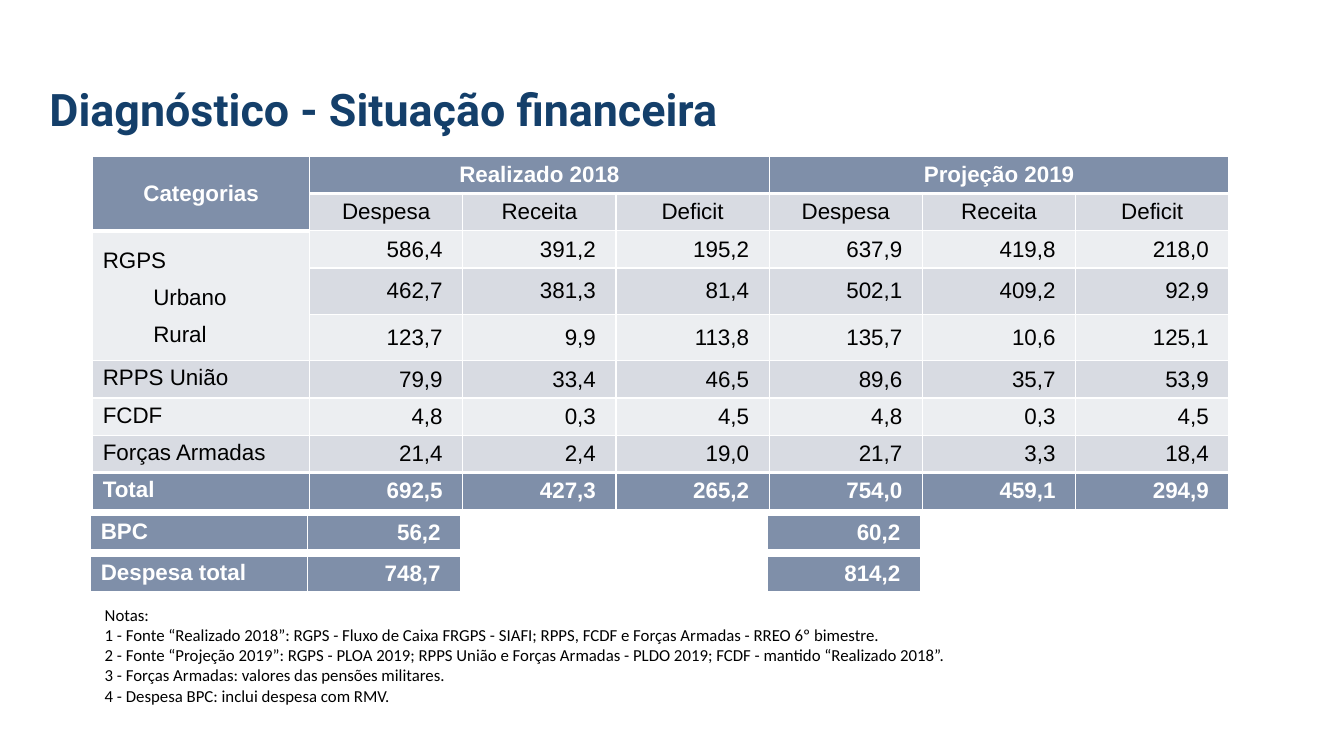
import pptx
import pptx.util
import pptx.dml.color
import pptx.enum.text
import pptx.oxml
import pptx.oxml.ns
from pptx.util import Inches

RGB = pptx.dml.color.RGBColor
ALIGN = pptx.enum.text.PP_ALIGN
ANCHOR = pptx.enum.text.MSO_ANCHOR

NAVY = RGB(0x14, 0x3F, 0x6A)
SLATE = RGB(0x7F, 0x8F, 0xA9)
GRAY = RGB(0xD8, 0xDB, 0xE2)
PALE = RGB(0xEC, 0xEE, 0xF1)
WHITE = RGB(0xFF, 0xFF, 0xFF)
BLACK = RGB(0, 0, 0)

TITLE = "Diagnóstico - Situação financeira"
MEASURES = ["Despesa", "Receita", "Deficit"]
ROWS = [
    ["Categorias", "Realizado 2018", "", "", "Projeção 2019", "", ""],
    [""] + MEASURES * 2,
    ["RGPS\nUrbano\nRural", "586,4", "391,2", "195,2", "637,9", "419,8", "218,0"],
    ["", "462,7", "381,3", "81,4", "502,1", "409,2", "92,9"],
    ["", "123,7", "9,9", "113,8", "135,7", "10,6", "125,1"],
    ["RPPS União", "79,9", "33,4", "46,5", "89,6", "35,7", "53,9"],
    ["FCDF", "4,8", "0,3", "4,5", "4,8", "0,3", "4,5"],
    ["Forças Armadas", "21,4", "2,4", "19,0", "21,7", "3,3", "18,4"],
    ["Total", "692,5", "427,3", "265,2", "754,0", "459,1", "294,9"],
]
MERGES = [(0, 0, 1, 0), (0, 1, 0, 3), (0, 4, 0, 6), (2, 0, 4, 0)]
HEIGHTS = [0.37, 0.37, 0.37, 0.46, 0.46, 0.37, 0.37, 0.37, 0.37]
EXTRA_ROWS = [
    (5.1, ["BPC", "56,2", "", "", "60,2", "", ""]),
    (5.51, ["Despesa total", "748,7", "", "", "814,2", "", ""]),
]
COLUMNS = [2.15] + [1.52] * 6
NOTES = [
    "Notas:",
    "1 - Fonte “Realizado 2018”: RGPS - Fluxo de Caixa FRGPS - SIAFI; RPPS, FCDF e Forças Armadas - RREO 6º bimestre.",
    "2 - Fonte “Projeção 2019”: RGPS - PLOA 2019; RPPS União e Forças Armadas - PLDO 2019; FCDF - mantido “Realizado 2018”.",
    "3 - Forças Armadas: valores das pensões militares.",
    "4 - Despesa BPC: inclui despesa com RMV.",
]


def add_run(p, text, size, font, color, bold=False):
    r = p.add_run()
    r.text = text
    r.font.size = pptx.util.Pt(size)
    r.font.name = font
    r.font.color.rgb = color
    r.font.bold = bold


def set_borders(cell, top, bottom):
    tcPr = cell._tc.get_or_add_tcPr()
    ns = pptx.oxml.ns.nsdecls("a")
    for i, (side, width) in enumerate([("L", 1), ("R", 1), ("T", top), ("B", bottom)]):
        tcPr.insert(i, pptx.oxml.parse_xml(
            f'<a:ln{side} {ns} w="{width * 12700}"><a:solidFill>'
            f'<a:srgbClr val="{WHITE}"/></a:solidFill></a:ln{side}>'))


def fill_cell(cell, text, fill, align, bold):
    cell.fill.solid()
    cell.fill.fore_color.rgb = fill
    if not text:
        cell.margin_top = cell.margin_bottom = 0
        return
    if align != ALIGN.LEFT:
        cell.vertical_anchor = ANCHOR.MIDDLE
    if align == ALIGN.RIGHT:
        cell.margin_right = Inches(0.2)
    lines = text.split("\n")
    tf = cell.text_frame
    for i, line in enumerate(lines):
        p = tf.add_paragraph() if i else tf.paragraphs[0]
        p.alignment = align
        if len(lines) > 1:
            p.line_spacing = 1.5
        if i:
            p._p.get_or_add_pPr().set("marL", str(Inches(0.5)))
        add_run(p, line, 16, "Arial", WHITE if bold else BLACK, bold)


def new_table(s, left, top, heights):
    frame = s.shapes.add_table(len(heights), len(COLUMNS), Inches(left), Inches(top),
                               Inches(sum(COLUMNS)), Inches(sum(heights)))
    table = frame.table
    for column, width in zip(table.columns, COLUMNS):
        column.width = Inches(width)
    for row, height in zip(table.rows, heights):
        row.height = Inches(height)
    return table


def add_main_table(s):
    table = new_table(s, 0.92, 1.55, HEIGHTS)
    total = len(ROWS) - 1
    for merge in MERGES:
        table.cell(*merge[:2]).merge(table.cell(*merge[2:]))
    for i, row in enumerate(ROWS):
        for j, text in enumerate(row):
            header = i == 0 or (i == 1 and j == 0)
            bold = header or i == total
            band = PALE if i % 2 == 0 else GRAY
            if j == 0 and 2 <= i <= 4:
                band = PALE
            align = ALIGN.CENTER if i < 2 else ALIGN.RIGHT if j else ALIGN.LEFT
            cell = table.cell(i, j)
            fill_cell(cell, text, SLATE if bold else band, align, bold)
            thick = {2 if j == 0 else 1, total}
            set_borders(cell, 3 if i in thick else 1, 3 if i + 1 in thick else 1)


def add_extra_row(s, top, row):
    table = new_table(s, 0.9, top, [0.37])
    for j, text in enumerate(row):
        cell = table.cell(0, j)
        fill_cell(cell, text, SLATE if text else WHITE,
                  ALIGN.RIGHT if j else ALIGN.LEFT, True)
        set_borders(cell, 3, 3)


def main():
    prs = pptx.Presentation()
    prs.slide_width, prs.slide_height = Inches(13.33), Inches(7.5)
    s = prs.slides.add_slide(prs.slide_layouts[5])

    title = s.shapes.title
    title.left, title.top = Inches(0), Inches(0.76)
    title.width, title.height = Inches(9.97), Inches(0.64)
    tf = title.text_frame
    tf.auto_size = pptx.enum.text.MSO_AUTO_SIZE.NONE
    tf.vertical_anchor = ANCHOR.TOP
    tf.margin_left = Inches(0.49)
    tf.paragraphs[0].alignment = ALIGN.LEFT
    add_run(tf.paragraphs[0], TITLE, 32, "Roboto", NAVY, True)

    add_main_table(s)
    for top, row in EXTRA_ROWS:
        add_extra_row(s, top, row)

    tf = s.shapes.add_textbox(Inches(0.94), Inches(5.95), Inches(8.57), Inches(1.11)).text_frame
    tf.word_wrap = True
    for i, note in enumerate(NOTES):
        p = tf.add_paragraph() if i else tf.paragraphs[0]
        p.alignment = ALIGN.JUSTIFY
        add_run(p, note, 12, "Calibri", BLACK)

    prs.save("out.pptx")


if __name__ == "__main__":
    main()
